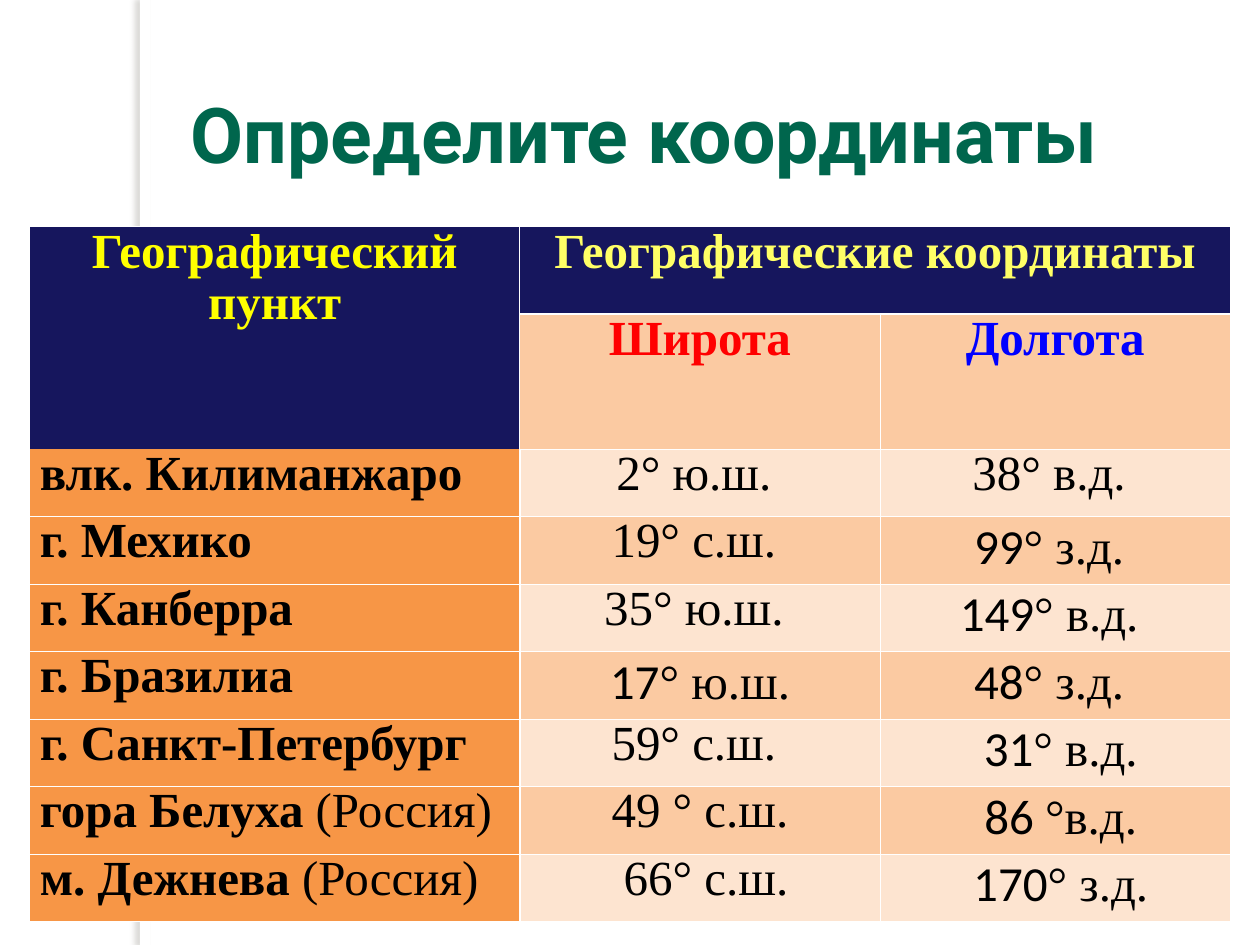
import pptx
import pptx.dml.color
import pptx.enum.shapes
import pptx.enum.text
import pptx.oxml
import pptx.oxml.ns
import pptx.util

Pt = pptx.util.Pt
CENTER = pptx.enum.text.PP_ALIGN.CENTER
LEFT = pptx.enum.text.PP_ALIGN.LEFT
MIDDLE = pptx.enum.text.MSO_ANCHOR.MIDDLE
NAMESPACE = pptx.oxml.ns.nsdecls("a")

NAVY, ORANGE, PEACH, CREAM = "16165D", "F79646", "FBCAA2", "FDE4D0"
THIN, THICK = 0.45, 1.47
COLUMN_WIDTHS = (280, 206, 200)
ROW_HEIGHTS = (50, 77) + (38.6,) * 7

# Place, latitude, longitude. In a pair, the second part of a place is not bold;
# the first part of a coordinate is set in Calibri.
PLACES = [
    (("влк. Килиманжаро",), ("2° ю.ш. ",), ("38° в.д. ",)),
    (("г. Мехико",), ("19° с.ш. ",), ("99", "° з.д. ")),
    (("г. Канберра",), ("35° ю.ш. ",), ("149", "° в.д. ")),
    (("г. Бразилиа",), ("17", "° ю.ш."), ("48", "° з.д. ")),
    (("г. Санкт-Петербург",), ("59° с.ш. ",), (" 31", "° в.д.")),
    (("гора Белуха ", "(Россия)"), ("49 ° с.ш.",), (" 86 ", "°в.д.")),
    (("м. Дежнева ", "(Россия)"), (" 66° с.ш.",), (" 170", "° з.д.")),
]


def color(value):
    return pptx.dml.color.RGBColor.from_string(value)


def add_text(paragraph, text, font="Times New Roman", size=28, fill="000000", bold=False):
    run = paragraph.add_run()
    run.text = text
    run.font.name = font
    run.font.size = Pt(size)
    run.font.bold = bold
    run.font.color.rgb = color(fill)


def add_title(slide, text):
    box = slide.shapes.add_textbox(Pt(50.4), Pt(39.6), Pt(636), Pt(72))
    frame = box.text_frame
    frame.word_wrap = True
    frame.vertical_anchor = MIDDLE
    frame.paragraphs[0].alignment = CENTER
    add_text(frame.paragraphs[0], text, font="Roboto", size=44, fill="00664D", bold=True)


def add_side_strip(slide):
    shape = slide.shapes.add_shape(
        pptx.enum.shapes.MSO_SHAPE.RECTANGLE, Pt(80), Pt(0), Pt(5.76), Pt(540))
    shape.fill.solid()
    shape.fill.fore_color.rgb = color("FFFFFF")
    shape.line.fill.background()
    shape.shadow.inherit = False
    effects = shape._element.spPr.find(pptx.oxml.ns.qn("a:effectLst"))
    effects.append(pptx.oxml.parse_xml(
        f'<a:outerShdw {NAMESPACE} blurRad="{Pt(3)}" dist="{Pt(3)}" dir="10800000">'
        '<a:srgbClr val="736F63"><a:alpha val="25000"/></a:srgbClr></a:outerShdw>'))


def set_borders(cell, **widths):
    properties = cell._tc.get_or_add_tcPr()
    for index, side in enumerate("LRTB"):
        width = widths.get(side, THIN)
        paint = '<a:solidFill><a:srgbClr val="FFFFFF"/></a:solidFill>' if width else "<a:noFill/>"
        properties.insert(index, pptx.oxml.parse_xml(
            f'<a:ln{side} {NAMESPACE} w="{Pt(width)}">{paint}</a:ln{side}>'))


def format_cell(cell, fill, alignment=CENTER, spacing=0.95, **borders):
    cell.margin_left = cell.margin_right = Pt(5.76)
    cell.margin_top = cell.margin_bottom = Pt(0)
    set_borders(cell, **borders)
    cell.fill.solid()
    cell.fill.fore_color.rgb = color(fill)
    paragraph = cell.text_frame.paragraphs[0]
    paragraph.alignment = alignment
    paragraph.line_spacing = spacing
    return paragraph


def add_header(table):
    table.cell(0, 0).merge(table.cell(1, 0))
    table.cell(0, 1).merge(table.cell(0, 2))
    headings = [
        (0, 0, "Географический пункт", "FFFF00", NAVY, {"B": 0}),
        (0, 1, "Географические координаты", "FFFF66", NAVY, {"B": THICK}),
        (1, 1, "Широта", "FF0000", PEACH, {"L": 0, "T": THICK}),
        (1, 2, "Долгота", "0000FF", PEACH, {"T": THICK}),
    ]
    for row, column, text, text_color, fill, borders in headings:
        paragraph = format_cell(table.cell(row, column), fill, **borders)
        add_text(paragraph, text, fill=text_color, bold=True)
    # Covered cells of the merged headings
    format_cell(table.cell(1, 0), NAVY, R=0, B=0)
    format_cell(table.cell(0, 2), NAVY, B=THICK)


def add_place(table, row, place, latitude, longitude):
    top = 0 if row == 2 else THIN
    paragraph = format_cell(table.cell(row, 0), ORANGE, alignment=LEFT, R=THICK, T=top)
    for index, part in enumerate(place):
        add_text(paragraph, part, bold=index == 0)

    band = CREAM if row % 2 == 0 else PEACH
    for column, parts in enumerate((latitude, longitude), start=1):
        mixed = len(parts) == 2
        paragraph = format_cell(table.cell(row, column), band,
                                spacing=1.02 if mixed else 0.95,
                                L=THICK if column == 1 else THIN)
        for index, part in enumerate(parts):
            font = "Calibri" if mixed and index == 0 else "Times New Roman"
            add_text(paragraph, part, font=font)


def add_coordinates_table(slide):
    frame = slide.shapes.add_table(
        len(ROW_HEIGHTS), len(COLUMN_WIDTHS), Pt(17), Pt(129.6),
        Pt(sum(COLUMN_WIDTHS)), Pt(sum(ROW_HEIGHTS)))
    table = frame.table
    for column, width in zip(table.columns, COLUMN_WIDTHS):
        column.width = Pt(width)
    for row, height in zip(table.rows, ROW_HEIGHTS):
        row.height = Pt(height)
    add_header(table)
    for row, place in enumerate(PLACES, start=2):
        add_place(table, row, *place)


def main():
    presentation = pptx.Presentation()
    presentation.slide_width = Pt(720)
    presentation.slide_height = Pt(540)
    slide = presentation.slides.add_slide(presentation.slide_layouts[6])
    add_side_strip(slide)
    add_coordinates_table(slide)
    add_title(slide, "Определите координаты")
    presentation.save("out.pptx")


if __name__ == "__main__":
    main()
